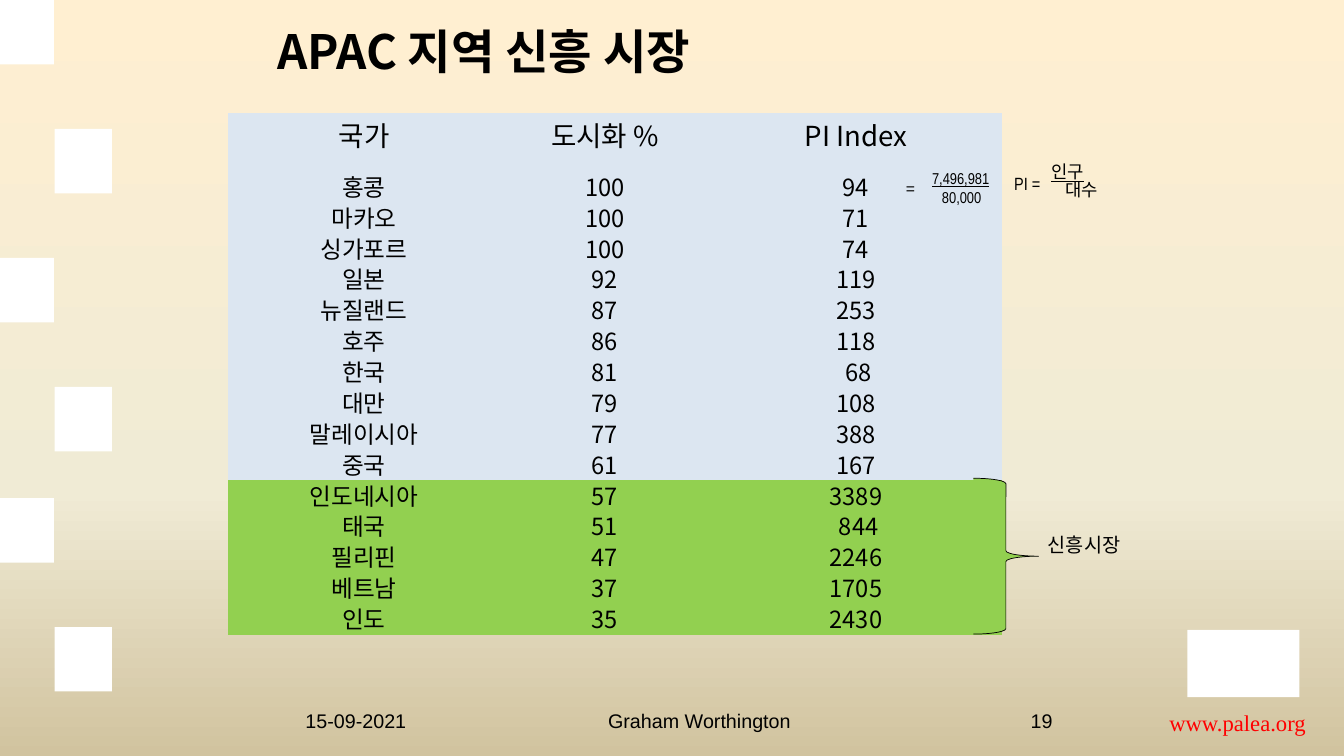
from lxml import etree
from pptx import Presentation
from pptx import util as u
from pptx.dml.color import RGBColor
from pptx.enum import shapes, text
from pptx.oxml.ns import qn

WIDTH, HEIGHT = 18.96, 10.67
KOREAN = "Noto Sans CJK KR"
COLORS = {"black": "000000", "white": "FFFFFF", "red": "FF0000",
          "mature": "DCE6F1", "emerging": "92D050"}
BACKGROUND = [(0, "FFEFD1"), (65, "F0EBD5"), (100, "D1C39F")]
NO_TABLE_STYLE = "{2D5ABB26-0587-4C30-8999-92F81FD0307C}"

HEADER = ("국가", "도시화 %", "PI Index")
MATURE = [
    ("홍콩", "100", "94"), ("마카오", "100", "71"), ("싱가포르", "100", "74"),
    ("일본", "92", "119"), ("뉴질랜드", "87", "253"), ("호주", "86", "118"),
    ("한국", "81", " 68"), ("대만", "79", "108"), ("말레이시아", "77", "388"),
    ("중국", "61", "167"),
]
EMERGING = [
    ("인도네시아", "57", "3389"), ("태국", "51", " 844"), ("필리핀", "47", "2246"),
    ("베트남", "37", "1705"), ("인도", "35", "2430"),
]
COLUMN_WIDTHS = (3.83, 2.97, 4.11)
TABLE_LEFT, TABLE_TOP, TABLE_HEIGHT = 3.22, 1.6, 7.36
HEADER_HEIGHT, SPACER_HEIGHT = 0.56, 0.26
SQUARE_TOPS = (0, 1.82, 3.64, 5.46, 7.03, 8.85)
FOOTER = ("15-09-2021", "Graham Worthington", "19")
FOOTER_TABS = (4.27, 10.23)

LABELS = [
    {"box": (15.96, 9.96, 3, 0.49), "lines": ["www.palea.org"], "size": 23,
     "font": "Times New Roman", "color": "red", "center": True},
    {"box": (14.53, 7.47, 1.53, 0.44), "lines": ["신흥시장"], "size": 20, "center": True},
    {"box": (14.21, 2.39, 0.6, 0.4), "lines": ["PI ="], "size": 18, "font": "Arial Narrow"},
    {"box": (14.73, 2.27, 1.81, 0.71), "lines": ["인구", "대수"], "size": 18,
     "indent": 0.2, "spacing": 0.85},
    {"box": (13.05, 2.34, 1.53, 0.64), "lines": ["7,496,981", "80,000"], "size": 16,
     "font": "Arial Narrow", "indent": 0.14},
    {"box": (12.68, 2.48, 0.33, 0.37), "lines": ["="], "size": 16, "font": "Arial"},
]


def inches(*lengths):
    return [u.Inches(length) for length in lengths]


def style(paragraph, size, font=KOREAN, color="black", align=text.PP_ALIGN.LEFT):
    paragraph.alignment = align
    paragraph.font.size = u.Pt(size)
    paragraph.font.color.rgb = RGBColor.from_string(COLORS[color])
    paragraph.font.name = font
    defaults = paragraph._p.pPr.find(qn("a:defRPr"))
    etree.SubElement(defaults, qn("a:ea"), typeface=font)


def add_box(slide, box):
    frame = slide.shapes.add_textbox(*inches(*box)).text_frame
    frame.word_wrap = True
    return frame


def add_label(slide, label):
    frame = add_box(slide, label["box"])
    lines = label["lines"]
    align = text.PP_ALIGN.CENTER if label.get("center") else text.PP_ALIGN.LEFT
    for index, line in enumerate(lines):
        paragraph = frame.add_paragraph() if index else frame.paragraphs[0]
        paragraph.text = line
        if index:
            paragraph._p.get_or_add_pPr().set("marL", str(u.Inches(label["indent"])))
        if "spacing" in label:
            paragraph.line_spacing = label["spacing"]
        style(paragraph, label["size"], label.get("font", KOREAN),
              label.get("color", "black"), align)
        if len(lines) > 1 and index == 0:
            paragraph.font.underline = True


def add_shape(slide, kind, box, fill):
    shape = slide.shapes.add_shape(kind, *inches(*box))
    shape.shadow.inherit = False
    shape.fill.solid()
    shape.fill.fore_color.rgb = RGBColor.from_string(COLORS[fill])
    shape.line.fill.background()
    return shape


def paint_background(slide):
    fill = slide.background.fill
    fill.gradient()
    fill.gradient_angle = 270
    stops = next(slide.element.iter(qn("a:gsLst")))
    for stop in list(stops):
        stops.remove(stop)
    for share, color in BACKGROUND:
        stop = etree.SubElement(stops, qn("a:gs"), pos=str(share * 1000))
        etree.SubElement(stop, qn("a:srgbClr"), val=color)


def add_footer(slide):
    paragraph = add_box(slide, (4.21, 9.96, 11.42, 0.44)).paragraphs[0]
    paragraph.text = "\t".join(FOOTER)
    tabs = etree.SubElement(paragraph._p.get_or_add_pPr(), qn("a:tabLst"))
    for position in FOOTER_TABS:
        etree.SubElement(tabs, qn("a:tab"), pos=str(u.Inches(position)), algn="l")
    style(paragraph, 20, "Arial")


def add_market_table(slide):
    rows = [HEADER, ("", "", "")] + MATURE + EMERGING
    first_emerging = len(rows) - len(EMERGING)
    body_height = (TABLE_HEIGHT - HEADER_HEIGHT - SPACER_HEIGHT) / (len(rows) - 2)
    frame = slide.shapes.add_table(
        len(rows), len(HEADER),
        *inches(TABLE_LEFT, TABLE_TOP, sum(COLUMN_WIDTHS), TABLE_HEIGHT))
    table = frame.table
    table.first_row = table.horz_banding = False
    next(table._tbl.iter(qn("a:tableStyleId"))).text = NO_TABLE_STYLE
    for column, width in zip(table.columns, COLUMN_WIDTHS):
        column.width = u.Inches(width)
    heights = [HEADER_HEIGHT, SPACER_HEIGHT] + [body_height] * (len(rows) - 2)
    for index, (values, height) in enumerate(zip(rows, heights)):
        table.rows[index].height = u.Inches(height)
        fill = "emerging" if index >= first_emerging else "mature"
        for cell, value in zip(table.rows[index].cells, values):
            cell.fill.solid()
            cell.fill.fore_color.rgb = RGBColor.from_string(COLORS[fill])
            cell.margin_left = cell.margin_right = cell.margin_top = u.Inches(0.01)
            cell.margin_bottom = 0
            cell.vertical_anchor = text.MSO_ANCHOR.BOTTOM
            paragraph = cell.text_frame.paragraphs[0]
            if value:
                paragraph.text = value
                paragraph.line_spacing = 0.88
                style(paragraph, 24 if index else 28, align=text.PP_ALIGN.CENTER)
            else:
                etree.SubElement(paragraph._p, qn("a:endParaRPr"), sz="1000")


def main():
    presentation = Presentation()
    presentation.slide_width, presentation.slide_height = inches(WIDTH, HEIGHT)
    slide = presentation.slides.add_slide(presentation.slide_layouts[5])
    paint_background(slide)

    rectangle = shapes.MSO_SHAPE.RECTANGLE
    add_shape(slide, rectangle, (16.75, 8.89, 1.58, 0.95), "white")
    for index, top in enumerate(SQUARE_TOPS):
        left, width = (0.77, 0.81) if index % 2 else (0, 0.76)
        add_shape(slide, rectangle, (left, top, width, 0.91), "white")

    title = slide.shapes.title
    title.left, title.top, title.width, title.height = inches(3.77, -0.18, 12.8, 1.78)
    frame = title.text_frame
    frame.text = "APAC 지역 신흥 시장"
    frame.margin_left = frame.margin_right = u.Inches(0.14)
    frame.margin_top = frame.margin_bottom = u.Inches(0.07)
    frame.vertical_anchor = text.MSO_ANCHOR.MIDDLE
    style(frame.paragraphs[0], 48)
    frame.paragraphs[0].font.bold = True

    add_footer(slide)
    add_market_table(slide)
    brace = add_shape(slide, shapes.MSO_SHAPE.RIGHT_BRACE, (13.73, 6.75, 0.92, 2.2), "emerging")
    brace.line.color.rgb = RGBColor.from_string(COLORS["black"])
    brace.line.width = u.Pt(0.75)
    for label in LABELS:
        add_label(slide, label)
    presentation.save("out.pptx")


if __name__ == "__main__":
    main()
